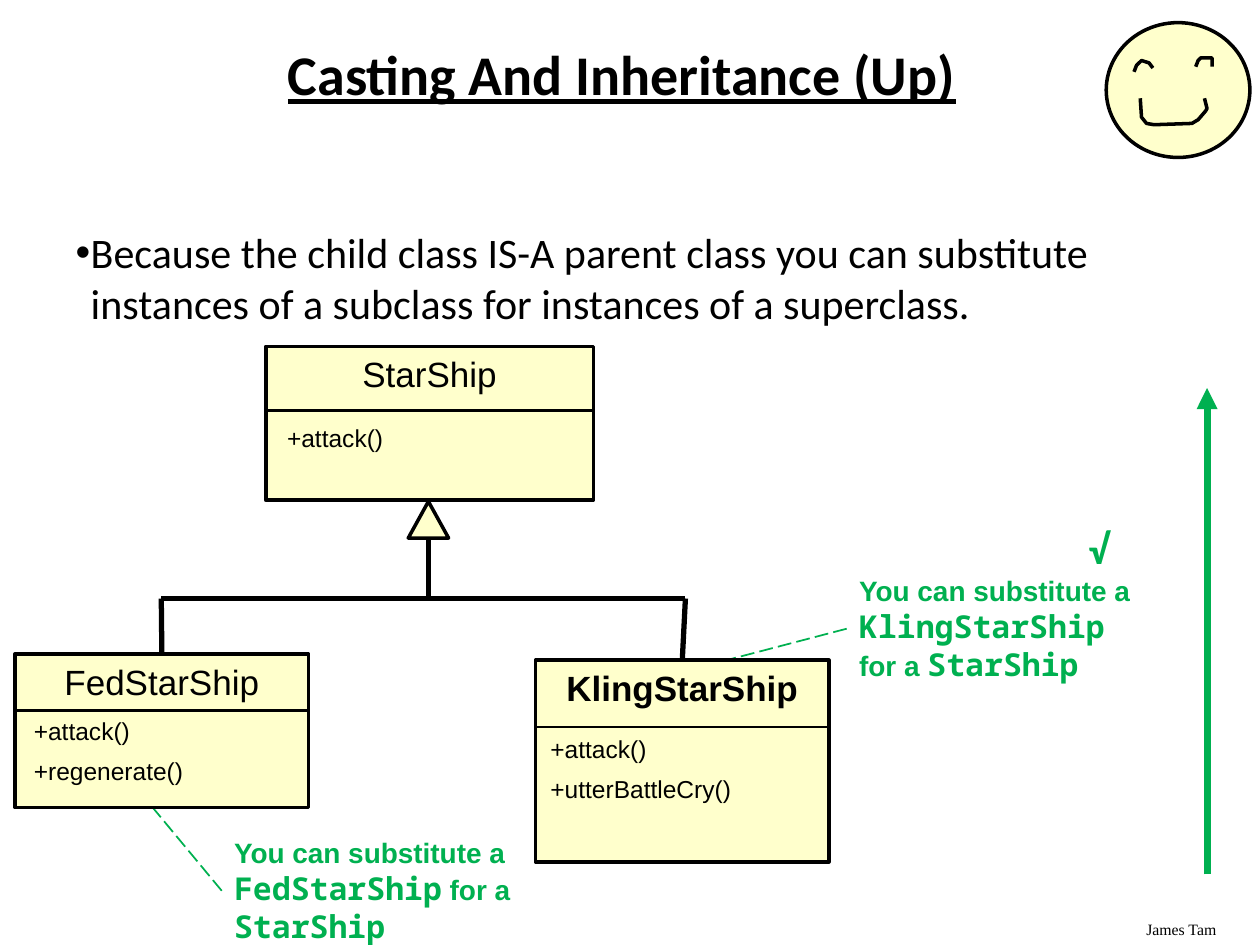
"""Build the slide on casting up an inheritance hierarchy."""
import pptx
import pptx.dml.color
import pptx.enum.dml
import pptx.enum.shapes
import pptx.enum.text
import pptx.oxml
import pptx.util
from pptx.util import Inches, Pt

RGBColor = pptx.dml.color.RGBColor
MSO_SHAPE = pptx.enum.shapes.MSO_SHAPE
PP_ALIGN = pptx.enum.text.PP_ALIGN
MSO_ANCHOR = pptx.enum.text.MSO_ANCHOR
LG_DASH = pptx.enum.dml.MSO_LINE.LONG_DASH

BLACK = RGBColor(0x00, 0x00, 0x00)
CREAM = RGBColor(0xFF, 0xFF, 0xCC)
GREEN = RGBColor(0x00, 0xB0, 0x50)

LEFT_EYE = [(9, 0.57), (9.02, 0.52), (9.06, 0.48), (9.12, 0.5), (9.15, 0.54)]
RIGHT_EYE = [(9.49, 0.53), (9.51, 0.48), (9.53, 0.46), (9.62, 0.46), (9.62, 0.53)]
MOUTH = [(9.05, 0.78), (9.06, 0.93), (9.1, 0.98), (9.16, 0.99), (9.46, 0.98),
         (9.51, 0.95), (9.57, 0.88), (9.58, 0.86), (9.56, 0.78)]


def set_font(font, name, size, color=BLACK, bold=False):
    """Set the face, size, colour and weight of a font."""
    font.name, font.size, font.bold = name, Pt(size), bold
    font.color.rgb = color


def place(s, left, top, width, height):
    """Move and size a shape, in inches."""
    s.left, s.top = Inches(left), Inches(top)
    s.width, s.height = Inches(width), Inches(height)


def fill_title(s, text):
    """Put the underlined heading in the title placeholder."""
    place(s, 0.47, 0.33, 8.93, 0.57)
    tf = s.text_frame
    tf.text = text
    tf.auto_size = pptx.enum.text.MSO_AUTO_SIZE.NONE
    tf.vertical_anchor = MSO_ANCHOR.MIDDLE
    p = tf.paragraphs[0]
    p.alignment, p.line_spacing = PP_ALIGN.CENTER, 0.9
    set_font(p.font, "Calibri", 32, bold=True)
    p.font.underline = True


def fill_body(s, text):
    """Put the bulleted statement in the body placeholder."""
    place(s, 0.5, 1.75, 9, 0.92)
    tf = s.text_frame
    tf.text = text
    tf.auto_size = pptx.enum.text.MSO_AUTO_SIZE.NONE
    p = tf.paragraphs[0]
    p.space_before = Pt(7)
    set_font(p.font, "Calibri", 24)
    pPr = p._p.get_or_add_pPr()
    pPr.set("marL", str(Inches(0.12)))
    pPr.set("indent", str(-Inches(0.12)))


def add_text(slide, box, runs, color=BLACK, bold=False, before=0):
    """Add a text box of one paragraph from (text, font, size) runs."""
    s = slide.shapes.add_textbox(*map(Inches, box))
    tf = s.text_frame
    tf.word_wrap = True
    p = tf.paragraphs[0]
    p.space_before = Pt(before)
    for text, name, size in runs:
        r = p.add_run()
        r.text = text
        set_font(r.font, name, size, color, bold)
    return s


def add_line(slide, start, end, width=3, color=BLACK, dash=None, arrow=False):
    """Add a straight line, dashed or with an arrowhead if asked."""
    s = slide.shapes.add_connector(
        pptx.enum.shapes.MSO_CONNECTOR.STRAIGHT,
        *map(Inches, (*start, *end)))
    s.line.width = Pt(width)
    s.line.color.rgb = color
    if dash:
        s.line.dash_style = dash
    if arrow:
        tail = pptx.oxml.xmlchemy.OxmlElement("a:tailEnd")
        tail.set("type", "triangle")
        s.line._get_or_add_ln().append(tail)
    s._element.spPr.append(pptx.oxml.xmlchemy.OxmlElement("a:effectLst"))
    return s


def add_shape(slide, kind, box, outlined=True):
    """Add a cream preset shape, with or without a black outline."""
    s = slide.shapes.add_shape(kind, *map(Inches, box))
    s.shadow.inherit = False
    s.fill.solid()
    s.fill.fore_color.rgb = CREAM
    if outlined:
        s.line.color.rgb = BLACK
        s.line.width = Pt(2)
    else:
        s.line.fill.background()
    return s


def add_class(slide, name, box, divider, members_box, members, bold=False):
    """Add a UML class box with its name, divider and members."""
    s = add_shape(slide, MSO_SHAPE.RECTANGLE, box)
    s.text_frame.text = name
    s.text_frame.vertical_anchor = MSO_ANCHOR.TOP
    p = s.text_frame.paragraphs[0]
    p.alignment = PP_ALIGN.CENTER
    set_font(p.font, "Arial", 20, bold=bold)

    body = add_shape(slide, MSO_SHAPE.RECTANGLE, members_box, outlined=False)
    body.text_frame.text = "\n".join(members)
    body.text_frame.vertical_anchor = MSO_ANCHOR.MIDDLE
    for p in body.text_frame.paragraphs:
        p.alignment, p.space_before = PP_ALIGN.LEFT, Pt(6)
        set_font(p.font, "Arial", 14)

    left, _, width, _ = box
    add_line(slide, (left, divider), (left + width, divider), 1.5)
    return s


def add_callout(slide, box, child, target):
    """Add a substitution note with a dashed line to its class."""
    s = add_text(slide, box, [
        ("You can substitute a ", "Arial", 16),
        (child, "Noto Sans Mono", 18),
        (" for a ", "Arial", 16),
        ("StarShip", "Noto Sans Mono", 18)], GREEN, True, 8)
    left, top, _, height = box
    line = add_line(slide, (left, top + height / 2), target, 1, GREEN, LG_DASH)
    line.begin_connect(s, 1)


def add_stroke(slide, points):
    """Add an open black stroke through the points."""
    start, *rest = [(Inches(x), Inches(y)) for x, y in points]
    builder = slide.shapes.build_freeform(*start)
    builder.add_line_segments(rest, close=False)
    s = builder.convert_to_shape()
    s.shadow.inherit = False
    s.fill.background()
    s.line.color.rgb = BLACK
    s.line.width = Pt(2)


def add_face(slide):
    """Add the smiling face."""
    add_shape(slide, MSO_SHAPE.OVAL, (8.78, 0.18, 1.14, 1.07))
    for points in (LEFT_EYE, MOUTH, RIGHT_EYE):
        add_stroke(slide, points)


def add_hierarchy(slide):
    """Add the three classes and the inheritance lines between them."""
    bus = 4.75
    add_line(slide, (3.4, 4.18), (3.4, bus))
    fed = add_class(slide, "FedStarShip", (0.12, 5.19, 2.33, 1.22), 5.64,
                    (0.17, 5.66, 1.83, 0.59), ["+attack()", "+regenerate()"])
    kling = add_class(slide, "KlingStarShip", (4.25, 5.24, 2.33, 1.6), 5.77,
                      (4.27, 5.82, 1.84, 0.56),
                      ["+attack()", "+utterBattleCry()"], bold=True)
    add_line(slide, (1.28, bus), (5.44, bus))
    for child, start, end in ((fed, (1.28, bus), (1.28, 5.19)),
                              (kling, (5.44, bus), (5.43, 5.24))):
        add_line(slide, start, end).end_connect(child, 0)
    add_shape(slide, MSO_SHAPE.ISOSCELES_TRIANGLE, (3.24, 3.98, 0.32, 0.29))
    add_class(slide, "StarShip", (2.11, 2.75, 2.6, 1.22), 3.26,
              (2.18, 3.22, 2.04, 0.51), ["+attack()"])


def main():
    """Build and save the slide."""
    prs = pptx.Presentation()
    prs.slide_width, prs.slide_height = Inches(10), Inches(7.5)
    slide = prs.slides.add_slide(prs.slide_layouts[1])
    fill_title(slide.shapes.title, "Casting And Inheritance (Up)")
    fill_body(slide.placeholders[1],
              "Because the child class IS-A parent class you can substitute "
              "instances of a subclass for instances of a superclass.")
    add_text(slide, (9, 7.25, 1, 0.25), [("James Tam", "Times New Roman", 9)])
    add_callout(slide, (1.76, 6.58, 2.4, 0.98), "FedStarShip", (1.08, 6.25))
    add_callout(slide, (6.72, 4.5, 2.48, 0.98), "KlingStarShip", (5.42, 5.33))
    add_line(slide, (9.58, 6.94), (9.58, 3.08), 4, GREEN, arrow=True)
    add_text(slide, (8.54, 4.1, 0.7, 0.5), [("√", "Calibri", 24)],
             GREEN, True, 12)
    add_hierarchy(slide)
    add_face(slide)
    prs.save("out.pptx")


if __name__ == "__main__":
    main()
